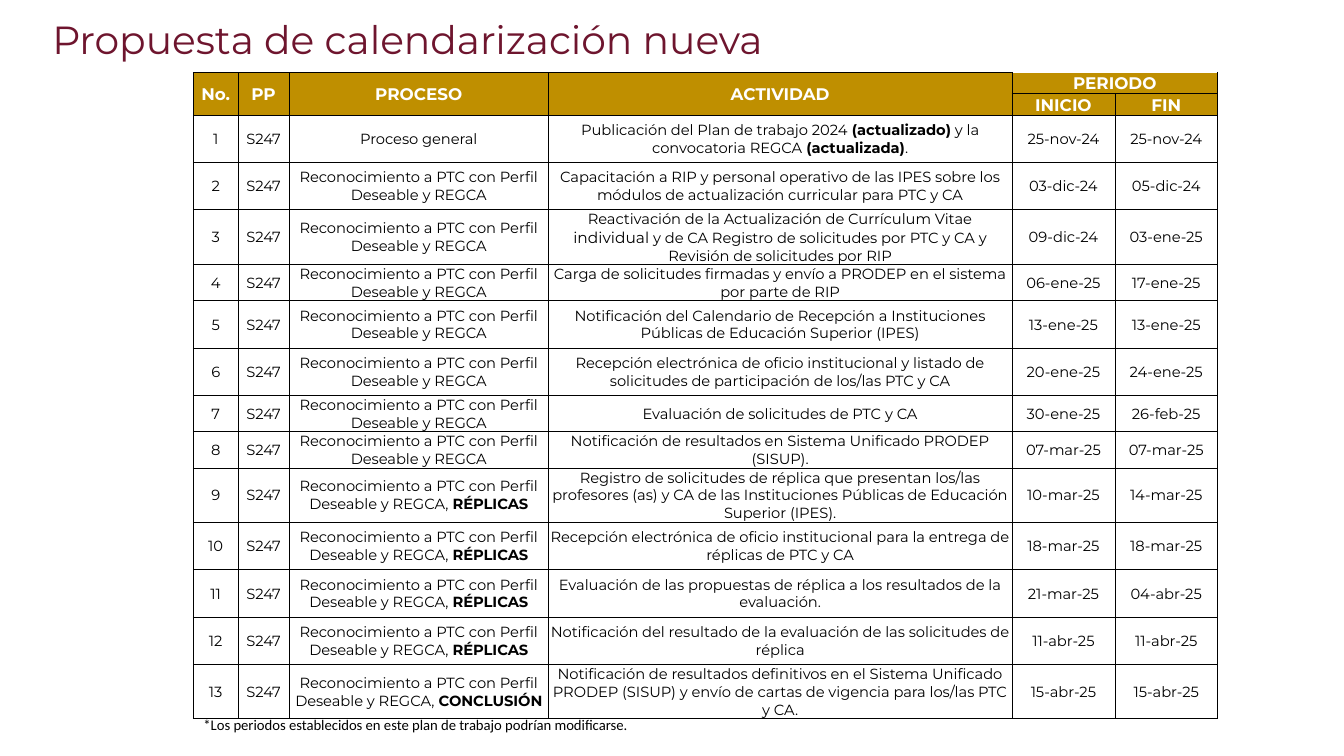
from dataclasses import dataclass
from lxml.etree import SubElement
from pptx import Presentation
from pptx.dml.color import RGBColor
from pptx.enum.text import MSO_ANCHOR as Anchor, PP_ALIGN as Align
from pptx.oxml.ns import qn
from pptx.util import Inches, Pt


@dataclass(frozen=True)
class Theme:
    wine: str = "6E152E"
    gold: str = "BF8F00"
    white: str = "FFFFFF"
    black: str = "000000"
    main_font: str = "Montserrat"
    note_font: str = "Calibri"
    title_size: float = 28
    header_size: float = 12
    body_size: float = 10.5
    accent_size: float = 11
    thin_line: float = 0.5
    thick_line: float = 1


@dataclass(frozen=True)
class Mark:
    """A stretch of text that departs from the cell's style."""
    text: str
    bold: bool = False
    size: float = Theme.body_size


class SlideBuilder:
    COLUMNS, ROWS = 160, 90

    def __init__(self, presentation, theme):
        self.theme = theme
        self.column = presentation.slide_width / self.COLUMNS
        self.row = presentation.slide_height / self.ROWS
        self.slide = presentation.slides.add_slide(presentation.slide_layouts[6])

    def across(self, columns):
        return round(columns * self.column)

    def down(self, rows):
        return round(rows * self.row)

    def style(self, run, size, color, font=None, bold=False):
        run.font.name = font or self.theme.main_font
        run.font.size = Pt(size)
        run.font.bold = bold
        run.font.color.rgb = RGBColor.from_string(color)

    def text(self, left, top, width, height, words, size, color, font=None,
             anchor=Anchor.TOP, line_spacing=1.0):
        shape = self.slide.shapes.add_textbox(
            self.across(left), self.down(top), self.across(width), self.down(height))
        frame = shape.text_frame
        frame.word_wrap = True
        frame.vertical_anchor = anchor
        frame.text = words
        paragraph = frame.paragraphs[0]
        paragraph.line_spacing = line_spacing
        self.style(paragraph.runs[0], size, color, font)

    def table(self, left, top, widths, heights):
        shape = self.slide.shapes.add_table(
            len(heights), len(widths), self.across(left), self.down(top),
            self.across(sum(widths)), self.down(sum(heights)))
        table = shape.table
        table.first_row = table.horz_banding = False
        for column, width in zip(table.columns, widths):
            column.width = self.across(width)
        for row, height in zip(table.rows, heights):
            row.height = self.down(height)
        return table

    def border(self, cell, side, width):
        line = SubElement(cell._tc.get_or_add_tcPr(), qn(f"a:ln{side}"), w=str(Pt(width)))
        fill = SubElement(line, qn("a:solidFill"))
        SubElement(fill, qn("a:srgbClr"), val=self.theme.black)

    def cell(self, cell, borders, header):
        cell.margin_left = cell.margin_right = cell.margin_top = Inches(0.01)
        cell.margin_bottom = 0
        cell.vertical_anchor = Anchor.MIDDLE
        for side, width in borders.items():
            self.border(cell, side, width)
        if header:
            cell.fill.solid()
            cell.fill.fore_color.rgb = RGBColor.from_string(self.theme.gold)
        else:
            cell.fill.background()

    def cell_text(self, cell, content, header=False):
        theme = self.theme
        size, color = ((theme.header_size, theme.white) if header
                       else (theme.body_size, theme.black))
        paragraph = cell.text_frame.paragraphs[0]
        paragraph.alignment = Align.CENTER
        for part in content if isinstance(content, tuple) else (content,):
            mark = part if isinstance(part, Mark) else Mark(part, header, size)
            run = paragraph.add_run()
            run.text = mark.text
            self.style(run, mark.size, color, bold=mark.bold)


# Content: row height, process, activity, start, end
PROGRAM = "S247"
RECOGNITION = "Reconocimiento a PTC con Perfil Deseable y REGCA"
REPLICAS = (RECOGNITION + ", ", Mark("RÉPLICAS", bold=True))
CONCLUSION = (RECOGNITION + ", ", Mark("CONCLUSIÓN", bold=True))
HEADER, SHORT, MEDIUM, TALL = 2.5, 4.32, 5.64, 6.48
ACTIVITIES = [
    (MEDIUM, "Proceso general",
     ("Publicación del Plan de trabajo 2024", Mark(" (actualizado)", bold=True),
      " y la convocatoria REGCA", Mark(" (actualizada)", bold=True), "."),
     "25-nov-24", "25-nov-24"),
    (MEDIUM, RECOGNITION,
     "Capacitación a RIP y personal operativo de las IPES sobre los módulos de "
     "actualización curricular para PTC y CA", "03-dic-24", "05-dic-24"),
    (TALL, RECOGNITION,
     ("Reactivación de la Actualización de Currículum Vitae ",
      Mark("individual", size=Theme.accent_size),
      " y de CA Registro de solicitudes por PTC y CA y Revisión de solicitudes por RIP"),
     "09-dic-24", "03-ene-25"),
    (SHORT, RECOGNITION,
     "Carga de solicitudes firmadas y envío a PRODEP en el sistema por parte de RIP",
     "06-ene-25", "17-ene-25"),
    (MEDIUM, RECOGNITION,
     "Notificación del Calendario de Recepción a Instituciones Públicas de "
     "Educación Superior (IPES)", "13-ene-25", "13-ene-25"),
    (MEDIUM, RECOGNITION,
     "Recepción electrónica de oficio institucional y listado de solicitudes de "
     "participación de los/las PTC y CA", "20-ene-25", "24-ene-25"),
    (SHORT, RECOGNITION, "Evaluación de solicitudes de PTC y CA", "30-ene-25", "26-feb-25"),
    (SHORT, RECOGNITION, "Notificación de resultados en Sistema Unificado PRODEP (SISUP).",
     "07-mar-25", "07-mar-25"),
    (TALL, REPLICAS,
     "Registro de solicitudes de réplica que presentan los/las profesores (as) y CA de "
     "las Instituciones Públicas de Educación Superior (IPES).", "10-mar-25", "14-mar-25"),
    (MEDIUM, REPLICAS,
     "Recepción electrónica de oficio institucional para la entrega de réplicas de PTC y CA",
     "18-mar-25", "18-mar-25"),
    (MEDIUM, REPLICAS,
     "Evaluación de las propuestas de réplica a los resultados de la evaluación.",
     "21-mar-25", "04-abr-25"),
    (MEDIUM, REPLICAS,
     "Notificación del resultado de la evaluación de las solicitudes de réplica",
     "11-abr-25", "11-abr-25"),
    (TALL, CONCLUSION,
     "Notificación de resultados definitivos en el Sistema Unificado PRODEP (SISUP) y "
     "envío de cartas de vigencia para los/las PTC y CA.", "15-abr-25", "15-abr-25"),
]
HEADINGS = ["No.", "PP", "PROCESO", "ACTIVIDAD"]
WIDTHS = [5.28, 6.12, 30.84, 55.2, 12.24, 12.24]
TABLE_LEFT, TABLE_TOP = 23.04, 8.64


def add_calendar(builder):
    theme = builder.theme
    heights = [HEADER] * 2 + [activity[0] for activity in ACTIVITIES]
    table = builder.table(TABLE_LEFT, TABLE_TOP, WIDTHS, heights)

    # Fills and borders
    period = len(HEADINGS)
    for r in range(len(heights)):
        for c in range(len(WIDTHS)):
            borders = dict.fromkeys("LRTB", theme.thin_line)
            if c == 0:
                borders["L"] = theme.thick_line
            if r < 2 and c == len(WIDTHS) - 1:
                borders["R"] = theme.thick_line
            if r == len(heights) - 1 and 0 < c < period:
                borders["B"] = theme.thick_line
            if r == 0 and c >= period:
                del borders["T"]
            builder.cell(table.cell(r, c), borders, header=r < 2)

    # Two-level header
    for c, heading in enumerate(HEADINGS):
        table.cell(0, c).merge(table.cell(1, c))
        builder.cell_text(table.cell(0, c), heading, header=True)
    table.cell(0, period).merge(table.cell(0, period + 1))
    for r, c, heading in [(0, period, "PERIODO"), (1, period, "INICIO"), (1, period + 1, "FIN")]:
        builder.cell_text(table.cell(r, c), heading, header=True)

    # Numbered activities
    for number, (_, *details) in enumerate(ACTIVITIES, 1):
        for c, content in enumerate([str(number), PROGRAM, *details]):
            builder.cell_text(table.cell(number + 1, c), content)


def main():
    presentation = Presentation()
    presentation.slide_width, presentation.slide_height = Inches(13.33), Inches(7.5)
    theme = Theme()
    builder = SlideBuilder(presentation, theme)
    builder.text(5.04, 1.68, 149.88, 6.6, "Propuesta de calendarización nueva",
                 theme.title_size, theme.wine, anchor=Anchor.MIDDLE, line_spacing=0.9)
    add_calendar(builder)
    builder.text(TABLE_LEFT, 84.6, sum(WIDTHS), 3.36,
                 "*Los periodos establecidos en este plan de trabajo podrían modificarse.",
                 theme.body_size, theme.black, theme.note_font)
    presentation.save("out.pptx")


if __name__ == "__main__":
    main()
